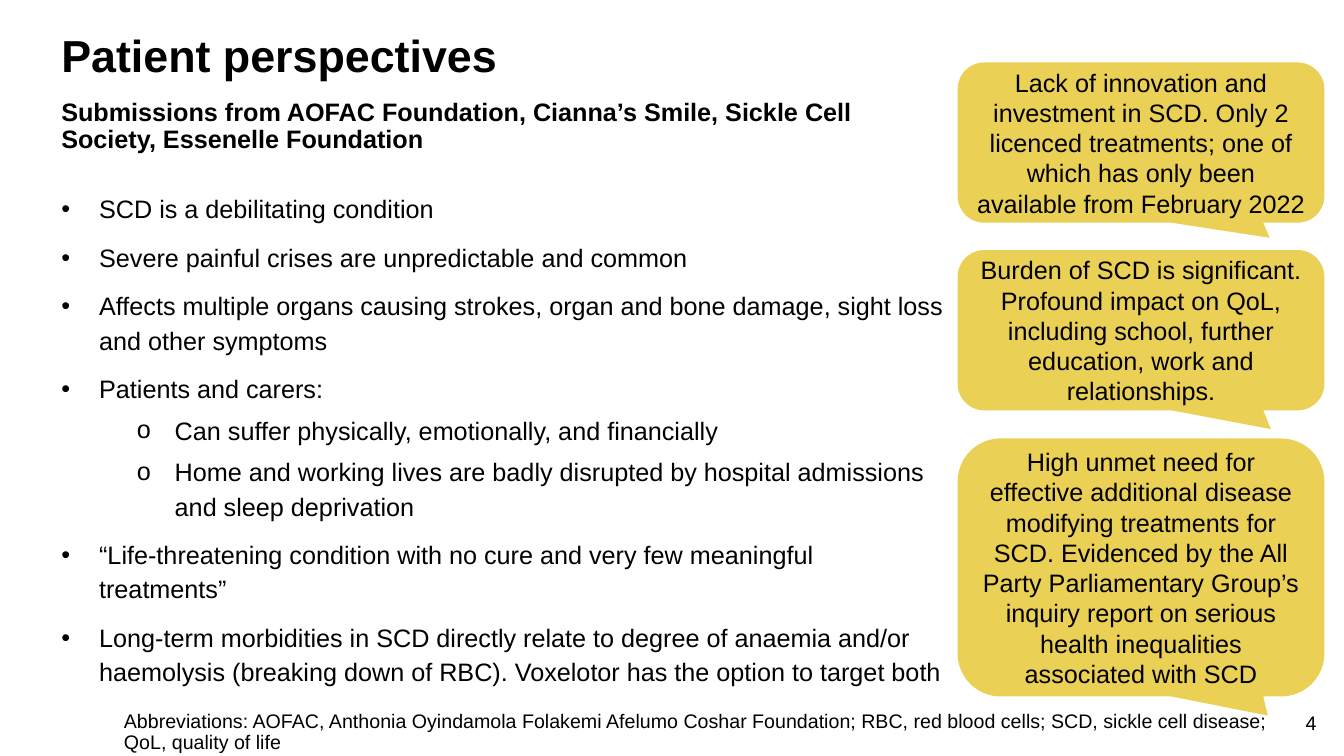
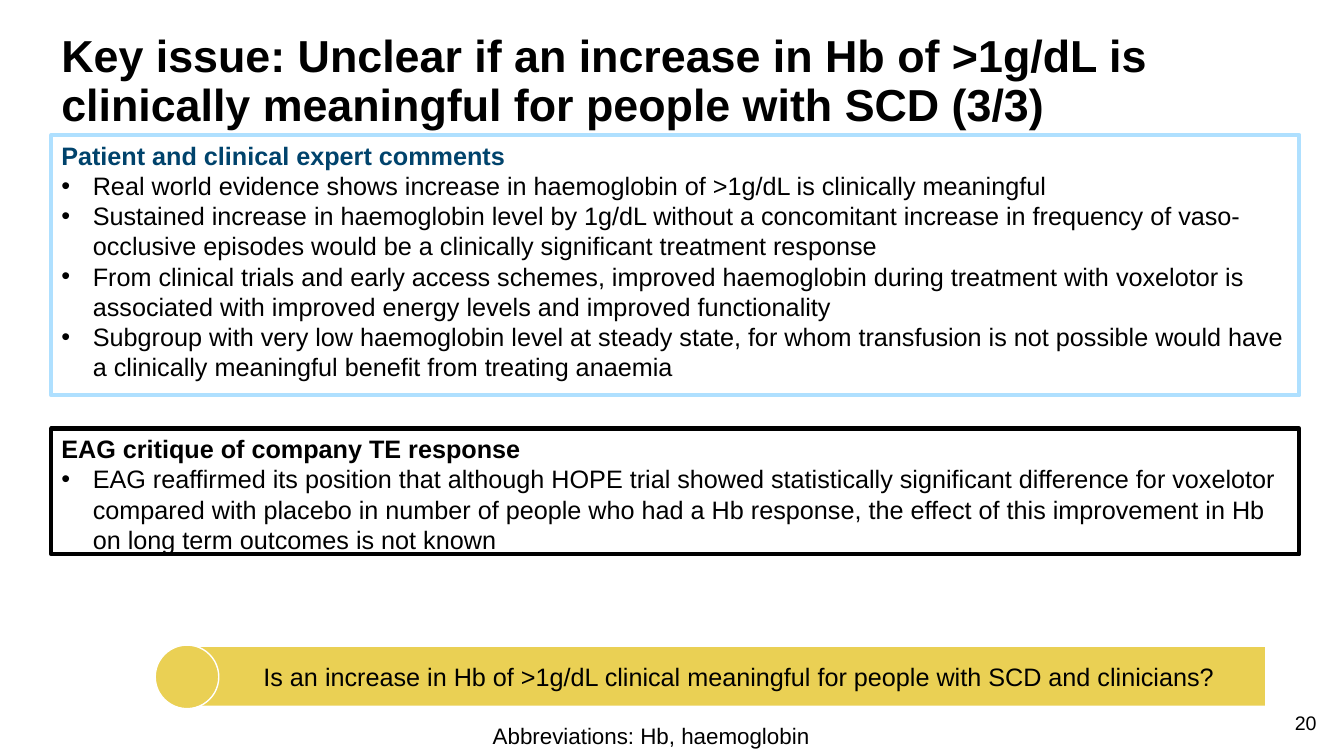
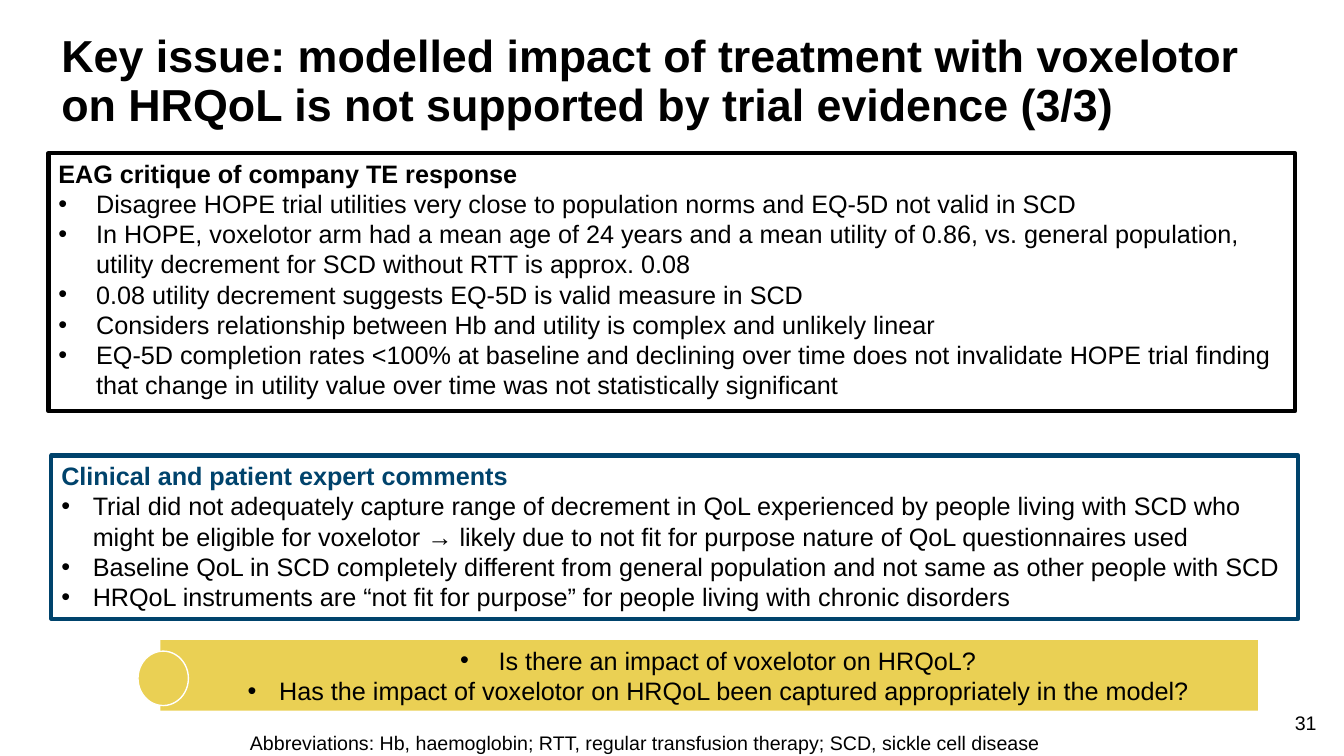
"""Builds three slides on patient and expert views of sickle cell disease."""
from lxml import etree
from pptx import Presentation
from pptx.dml.color import RGBColor
from pptx.enum.shapes import MSO_SHAPE
from pptx.enum.text import MSO_ANCHOR, PP_ALIGN
from pptx.oxml.ns import qn
from pptx.util import Pt

RECT = MSO_SHAPE.RECTANGLE
OVAL = MSO_SHAPE.OVAL
BUBBLE = MSO_SHAPE.ROUNDED_RECTANGULAR_CALLOUT
TOP, MIDDLE = MSO_ANCHOR.TOP, MSO_ANCHOR.MIDDLE
LEFT, CENTER, RIGHT = PP_ALIGN.LEFT, PP_ALIGN.CENTER, PP_ALIGN.RIGHT

BLACK = RGBColor(0, 0, 0)
WHITE = RGBColor(255, 255, 255)
GOLD = RGBColor(0xEA, 0xD0, 0x54)
NAVY = RGBColor(0x00, 0x43, 0x6C)
SKY = RGBColor(0xAF, 0xE0, 0xFF)

FONT = "Arial"
EDGE = 36.7
NARROW, WIDE = 22.5, 27


def set_bullet(para, mark, margin, hang):
    props = para._p.get_or_add_pPr()
    props.set("marL", str(Pt(margin)))
    props.set("indent", str(-Pt(hang)))
    etree.SubElement(props, qn("a:buFont")).set("typeface", FONT)
    etree.SubElement(props, qn("a:buChar")).set("char", mark)


def add_text(frame, text, size=18, color=BLACK, bold=False, align=LEFT,
             mark=None, margin=WIDE, hang=WIDE, lines=None, before=0):
    first = not frame.paragraphs[0].runs
    para = frame.paragraphs[0] if first else frame.add_paragraph()
    if mark:
        set_bullet(para, mark, margin, hang)
    para.alignment = align
    if lines:
        para.line_spacing = lines
    if before and not first:
        para.space_before = Pt(before)
    run = para.add_run()
    run.text = text
    font = run.font
    font.name, font.size, font.bold = FONT, Pt(size), bold
    font.color.rgb = color


def add_box(slide, left, top, width, height):
    box = slide.shapes.add_textbox(Pt(left), Pt(top), Pt(width), Pt(height))
    box.text_frame.word_wrap = True
    return box.text_frame


def add_form(slide, kind, place, fill=None, line=None, weight=1, anchor=MIDDLE):
    form = slide.shapes.add_shape(kind, *map(Pt, place))
    form.shadow.inherit = False
    if fill is None:
        form.fill.background()
    else:
        form.fill.solid()
        form.fill.fore_color.rgb = fill
    if line is None:
        form.line.fill.background()
    else:
        form.line.color.rgb = line
        form.line.width = Pt(weight)
    form.text_frame.word_wrap = True
    form.text_frame.vertical_anchor = anchor
    return form


def add_panel(slide, place, line, head, color, items, hang=NARROW):
    frame = add_form(slide, RECT, place, None, line, 3, TOP).text_frame
    add_text(frame, head, color=color, bold=True)
    for item in items:
        add_text(frame, item, mark="•", margin=hang, hang=hang)


def add_bubble(slide, top, height, tip, text):
    form = add_form(slide, BUBBLE, (684, top, 262, height), GOLD)
    for spot, value in enumerate((*tip, 0.167)):
        form.adjustments[spot] = value
    add_text(form.text_frame, text, align=CENTER)


def add_ask(slide, bar, dot, items, mark=None):
    frame = add_form(slide, RECT, bar, GOLD).text_frame
    frame.margin_left = Pt(20)
    for item in items:
        add_text(frame, item, align=CENTER, mark=mark, margin=NARROW, hang=NARROW)
    add_form(slide, OVAL, dot, GOLD, WHITE)


def start_slide(deck, title, number):
    slide = deck.slides.add_slide(deck.slide_layouts[6])
    add_text(add_box(slide, EDGE, 20.9, 885.6, 46.8), title, 32, bold=True, lines=0.9)
    add_text(add_box(slide, 910.8, 504, 36.7, 28.8), number, 14, align=RIGHT)
    return slide


def build_views(deck):
    slide = start_slide(deck, "Patient perspectives", "4")
    add_bubble(slide, 44.6, 114.5, (0.351, 0.594),
               "Lack of innovation and investment in SCD. Only 2 licenced treatments; "
               "one of which has only been available from February 2022")
    add_bubble(slide, 178.6, 114.5, (0.354, 0.617),
               "Burden of SCD is significant. Profound impact on QoL, including school, "
               "further education, work and relationships.")
    add_bubble(slide, 313.2, 184.3, (0.346, 0.574),
               "High unmet need for effective additional disease modifying treatments for "
               "SCD. Evidenced by the All Party Parliamentary Group’s inquiry report on "
               "serious health inequalities associated with SCD")
    add_text(add_box(slide, EDGE, 67.7, 641.5, 41),
             "Submissions from AOFAC Foundation, Cianna’s Smile, Sickle Cell Society, "
             "Essenelle Foundation", bold=True, lines=0.9)
    add_text(add_box(slide, 81.4, 504.7, 831.6, 28.8),
             "Abbreviations: AOFAC, Anthonia Oyindamola Folakemi Afelumo Coshar Foundation; "
             "RBC, red blood cells; SCD, sickle cell disease; QoL, quality of life",
             14, lines=0.9)
    frame = add_box(slide, EDGE, 131.8, 647.3, 378)
    for level, item in (
        (0, "SCD is a debilitating condition"),
        (0, "Severe painful crises are unpredictable and common"),
        (0, "Affects multiple organs causing strokes, organ and bone damage, sight loss "
            "and other symptoms"),
        (0, "Patients and carers:"),
        (1, "Can suffer physically, emotionally, and financially"),
        (1, "Home and working lives are badly disrupted by hospital admissions and sleep "
            "deprivation"),
        (0, "“Life-threatening condition with no cure and very few meaningful treatments”"),
        (0, "Long-term morbidities in SCD directly relate to degree of anaemia and/or "
            "haemolysis (breaking down of RBC). Voxelotor has the option to target both"),
    ):
        add_text(frame, item, mark="•o"[level], margin=WIDE + 54 * level,
                 lines=1.14, before=10 - 5 * level)


def build_rise(deck):
    slide = start_slide(deck, "Key issue: Unclear if an increase in Hb of >1g/dL is "
                        "clinically meaningful for people with SCD (3/3)", "20")
    add_panel(slide, (EDGE, 96.5, 891.4, 185.8), SKY,
              "Patient and clinical expert comments", NAVY, (
                  "Real world evidence shows increase in haemoglobin of >1g/dL is "
                  "clinically meaningful",
                  "Sustained increase in haemoglobin level by 1g/dL without a concomitant "
                  "increase in frequency of vaso-occlusive episodes would be a clinically "
                  "significant treatment response",
                  "From clinical trials and early access schemes, improved haemoglobin "
                  "during treatment with voxelotor is associated with improved energy "
                  "levels and improved functionality",
                  "Subgroup with very low haemoglobin level at steady state, for whom "
                  "transfusion is not possible would have a clinically meaningful benefit "
                  "from treating anaemia"))
    add_panel(slide, (EDGE, 306, 891.4, 90), BLACK,
              "EAG critique of company TE response", BLACK, (
                  "EAG reaffirmed its position that although HOPE trial showed "
                  "statistically significant difference for voxelotor compared with "
                  "placebo in number of people who had a Hb response, the effect of this "
                  "improvement in Hb on long term outcomes is not known",))
    add_ask(slide, (139, 462.2, 764.6, 41.8), (110.9, 460.8, 45.4, 45.4),
            ("Is an increase in Hb of >1g/dL clinical meaningful for people with SCD and "
             "clinicians?",))
    add_text(add_box(slide, 344.9, 512.6, 269.3, 26.6),
             "Abbreviations: Hb, haemoglobin", 16)


def build_model(deck):
    slide = start_slide(deck, "Key issue: modelled impact of treatment with voxelotor on "
                        "HRQoL is not supported by trial evidence (3/3)", "31")
    add_panel(slide, (34.6, 109.4, 890.6, 184.3), BLACK,
              "EAG critique of company TE response", BLACK, (
                  "Disagree HOPE trial utilities very close to population norms and EQ-5D "
                  "not valid in SCD",
                  "In HOPE, voxelotor arm had a mean age of 24 years and a mean utility of "
                  "0.86, vs. general population, utility decrement for SCD without RTT is "
                  "approx. 0.08",
                  "0.08 utility decrement suggests EQ-5D is valid measure in SCD",
                  "Considers relationship between Hb and utility is complex and unlikely "
                  "linear",
                  "EQ-5D completion rates <100% at baseline and declining over time does "
                  "not invalidate HOPE trial finding that change in utility value over "
                  "time was not statistically significant"), WIDE)
    add_panel(slide, (EDGE, 325.4, 890.6, 116.6), NAVY,
              "Clinical and patient expert comments", NAVY, (
                  "Trial did not adequately capture range of decrement in QoL experienced "
                  "by people living with SCD who might be eligible for voxelotor → likely "
                  "due to not fit for purpose nature of QoL questionnaires used",
                  "Baseline QoL in SCD completely different from general population and "
                  "not same as other people with SCD",
                  "HRQoL instruments are “not fit for purpose” for people living with "
                  "chronic disorders"))
    add_ask(slide, (114.5, 457.2, 784.1, 50.4), (98.6, 465.1, 36, 38.9),
            (" Is there an impact of voxelotor on HRQoL?",
             "Has the impact of voxelotor on HRQoL been captured appropriately in the "
             "model?"), "•")
    add_text(add_box(slide, 171.4, 520.6, 671, 19.4),
             "Abbreviations: Hb, haemoglobin; RTT, regular transfusion therapy; SCD, "
             "sickle cell disease", 14, lines=0.9)


def main():
    deck = Presentation()
    deck.slide_width, deck.slide_height = Pt(960), Pt(540)
    build_views(deck)
    build_rise(deck)
    build_model(deck)
    deck.save("out.pptx")


if __name__ == "__main__":
    main()
